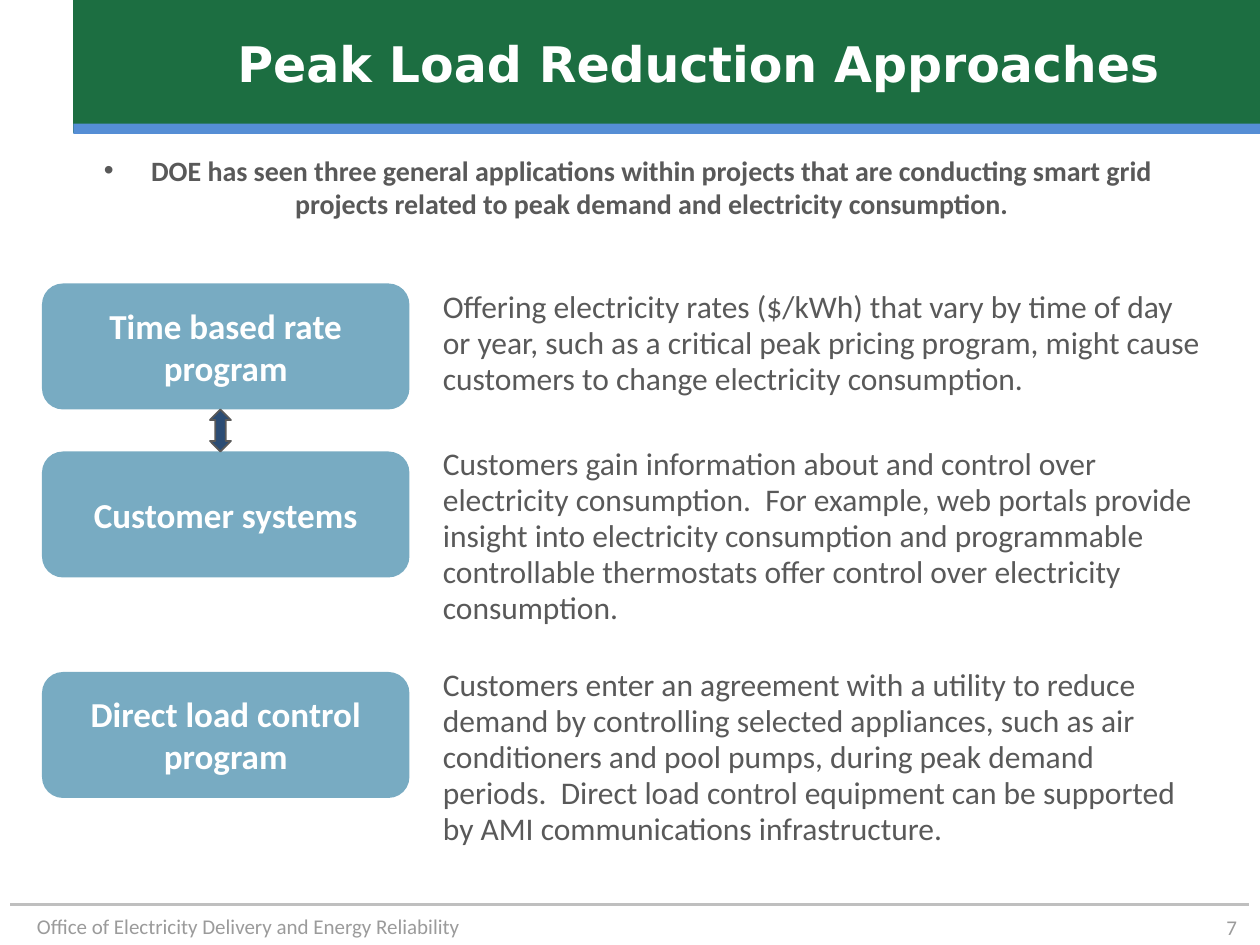
from lxml.etree import SubElement
from pptx import Presentation
from pptx.dml.color import RGBColor
from pptx.enum.shapes import MSO_CONNECTOR, MSO_SHAPE
from pptx.enum.text import MSO_ANCHOR, MSO_AUTO_SIZE, PP_ALIGN
from pptx.oxml.ns import qn
from pptx.util import Pt

COLORS = {
    "banner": "1C6E41",
    "stripe": "558ED5",
    "box": "78ABC2",
    "arrow": "2B4C74",
    "text": "595959",
    "white": "FFFFFF",
    "footer": "9B9B9B",
    "rule": "BFBFBF",
}

APPROACHES = [
    ("Time based rate program", 162, 162,
     "Offering electricity rates ($/kWh) that vary by time of day or year, such as a "
     "critical peak pricing program, might cause customers to change electricity "
     "consumption."),
    ("Customer systems", 258, 252,
     "Customers gain information about and control over electricity consumption.  For "
     "example, web portals provide insight into electricity consumption and programmable "
     "controllable thermostats offer control over electricity consumption."),
    ("Direct load control program", 384, 378,
     "Customers enter an agreement with a utility to reduce demand by controlling selected "
     "appliances, such as air conditioners and pool pumps, during peak demand periods.  "
     "Direct load control equipment can be supported by AMI communications infrastructure."),
]


class SlideBuilder:
    body_font = "Calibri"
    title_font = "DejaVu Sans"

    def __init__(self, slide):
        self.slide = slide

    def color(self, name):
        return RGBColor.from_string(COLORS[name])

    def fill_text(self, shape, text, size, color, bold=False, align=PP_ALIGN.LEFT,
                  anchor=MSO_ANCHOR.TOP, font=body_font, spacing=None):
        frame = shape.text_frame
        frame.text = text
        frame.word_wrap = True
        frame.auto_size = MSO_AUTO_SIZE.NONE
        frame.vertical_anchor = anchor
        paragraph = frame.paragraphs[0]
        paragraph.alignment = align
        paragraph.space_before = Pt(0)
        if spacing:
            paragraph.line_spacing = spacing
        for run in paragraph.runs:
            run.font.name = font
            run.font.size = Pt(size)
            run.font.bold = bold
            run.font.color.rgb = self.color(color)

    def placeholder(self, index, left, top, width, height, text, size, color, **style):
        holder = self.slide.placeholders[index]
        holder.left, holder.top = Pt(left), Pt(top)
        holder.width, holder.height = Pt(width), Pt(height)
        properties = holder.text_frame.paragraphs[0]._p.get_or_add_pPr()
        properties.set("marL", "0")
        properties.set("indent", "0")
        SubElement(properties, qn("a:buNone"))
        self.fill_text(holder, text, size, color, bold=True, align=PP_ALIGN.CENTER, **style)
        self.slide.shapes.element.append(holder.element)

    def shape(self, kind, left, top, width, height, fill, line=None):
        shape = self.slide.shapes.add_shape(kind, Pt(left), Pt(top), Pt(width), Pt(height))
        shape.shadow.inherit = False
        shape.fill.solid()
        shape.fill.fore_color.rgb = self.color(fill)
        if line:
            shape.line.color.rgb = self.color(line)
            shape.line.width = Pt(1)
        else:
            shape.line.fill.background()
        return shape

    def box(self, left, top, width, height, label):
        box = self.shape(MSO_SHAPE.ROUNDED_RECTANGLE, left, top, width, height, "box")
        self.fill_text(box, label, 20, "white", bold=True, align=PP_ALIGN.CENTER,
                       anchor=MSO_ANCHOR.MIDDLE)

    def text(self, left, top, width, height, text, size, color, **style):
        box = self.slide.shapes.add_textbox(Pt(left), Pt(top), Pt(width), Pt(height))
        self.fill_text(box, text, size, color, **style)

    def rule(self, left, right, y):
        rule = self.slide.shapes.add_connector(
            MSO_CONNECTOR.STRAIGHT, Pt(left), Pt(y), Pt(right), Pt(y))
        rule.line.color.rgb = self.color("rule")
        rule.line.width = Pt(1.75)
        SubElement(rule.element.spPr, qn("a:effectLst"))


def main():
    deck = Presentation()
    deck.slide_width, deck.slide_height = Pt(720), Pt(540)
    builder = SlideBuilder(deck.slides.add_slide(deck.slide_layouts[1]))

    builder.shape(MSO_SHAPE.RECTANGLE, 42, 0, 678, 75.6, "banner", line="banner")
    builder.shape(MSO_SHAPE.RECTANGLE, 42, 70.6, 678, 6, "stripe")
    builder.text(0, 518.4, 270, 21.6, "Office of Electricity Delivery and Energy Reliability",
                 12, "footer", align=PP_ALIGN.RIGHT)
    builder.rule(6, 714, 517)
    builder.text(534, 519, 180, 21, "7", 12, "footer", align=PP_ALIGN.RIGHT,
                 anchor=MSO_ANCHOR.MIDDLE)

    builder.placeholder(0, 78, 0, 642, 72, "Peak Load Reduction Approaches", 28, "white",
                        anchor=MSO_ANCHOR.MIDDLE, font=builder.title_font)
    builder.placeholder(1, 24, 84, 670, 48,
                        "DOE has seen three general applications within projects that are "
                        "conducting smart grid projects related to peak demand and "
                        "electricity consumption.", 16, "text")

    for label, box_top, text_top, description in APPROACHES:
        builder.box(24, box_top, 210, 72, label)
        builder.text(246, text_top, 450, 72, description, 18, "text", spacing=0.95)
    builder.shape(MSO_SHAPE.UP_DOWN_ARROW, 120, 234, 12, 24, "arrow", line="text")

    deck.save("out.pptx")


if __name__ == "__main__":
    main()
